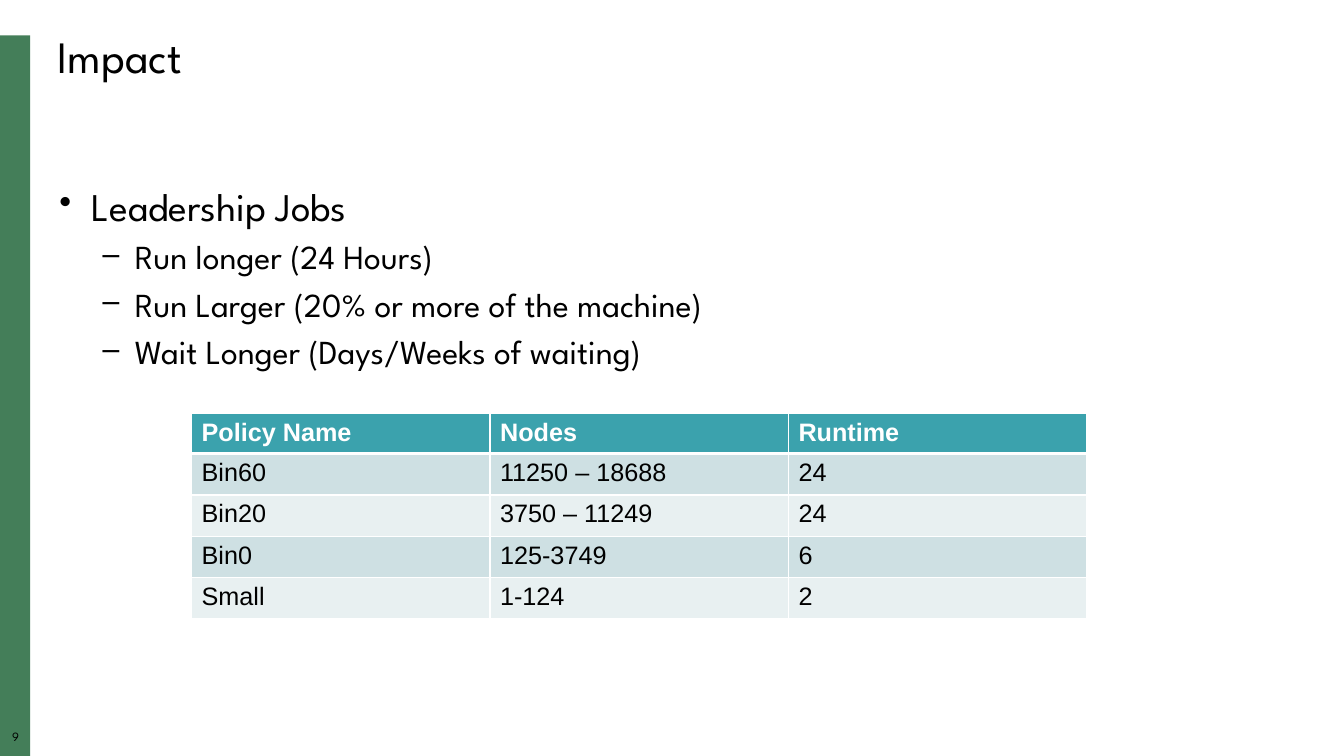
from dataclasses import dataclass

from lxml.etree import SubElement
from pptx import Presentation
from pptx.dml.color import RGBColor as RGB
from pptx.enum.shapes import MSO_SHAPE as SHAPE
from pptx.enum.text import MSO_ANCHOR as ANCHOR, PP_ALIGN as ALIGN
from pptx.oxml.ns import qn
from pptx.util import Inches, Pt

COLORS = {
    "bar": "447E59",
    "text": "000000",
    "white": "FFFFFF",
    "header": "3BA2AD",
    "band_dark": "CEE0E3",
    "band_light": "E8F0F1",
}
HEADING_FONT, TABLE_FONT = "League Spartan", "Arial"


@dataclass
class Line:
    text: str
    size: int
    level: int = 0
    bullet: str = ""
    indent: float = 0
    before: int = 0
    align: ALIGN = ALIGN.LEFT


@dataclass
class TextBlock:
    left: float
    top: float
    width: float
    height: float
    lines: list[Line]
    inset_x: float = 0.1
    inset_y: float = 0.05


TITLE = TextBlock(0.47, 0.3, 12.5, 0.59, [Line("Impact", 32)])
PAGE_NUMBER = TextBlock(0, 7.25, 0.31, 0.17, [Line("9", 9, align=ALIGN.CENTER)], 0, 0)
BODY = TextBlock(0.49, 1.81, 12.5, 4.43, [
    Line("Leadership Jobs", 28, 0, "•", 0.32),
    *(Line(text, 24, 1, "–", 0.75, 8) for text in (
        "Run longer (24 Hours)",
        "Run Larger (20% or more of the machine)",
        "Wait Longer (Days/Weeks of waiting)",
    )),
])

POLICIES = [
    ("Policy Name", "Nodes", "Runtime"),
    ("Bin60", "11250 – 18688", "24"),
    ("Bin20", "3750 – 11249", "24"),
    ("Bin0", "125-3749", "6"),
    ("Small", "1-124", "2"),
]
COL_WIDTH, HEADER_HEIGHT, ROW_HEIGHT = 2.96, 0.38, 0.41


def rgb(name: str) -> RGB:
    return RGB.from_string(COLORS[name])


def add_run(p, text: str, color: str, **formats) -> None:
    r = p.add_run()
    r.text = text
    r.font.color.rgb = rgb(color)
    for name, value in formats.items():
        setattr(r.font, name, value)


def add_color(parent, color: str) -> None:
    SubElement(parent, qn("a:srgbClr"), val=COLORS[color])


def set_bullet(p, char: str, indent: float) -> None:
    pPr = p._p.get_or_add_pPr()
    pPr.set("marL", str(Inches(indent)))
    pPr.set("indent", str(Inches(-0.32)))
    add_color(SubElement(pPr, qn("a:buClr")), "text")
    SubElement(pPr, qn("a:buSzPct"), val="90000")
    SubElement(pPr, qn("a:buChar"), char=char)


def add_text(s, block: TextBlock) -> None:
    box = s.shapes.add_textbox(*map(Inches, (block.left, block.top, block.width, block.height)))
    tf = box.text_frame
    frame_formats = {
        "word_wrap": True,
        "vertical_anchor": ANCHOR.TOP,
        "margin_left": Inches(block.inset_x),
        "margin_right": Inches(block.inset_x),
        "margin_top": Inches(block.inset_y),
        "margin_bottom": Inches(block.inset_y),
    }
    for name, value in frame_formats.items():
        setattr(tf, name, value)
    for i, line in enumerate(block.lines):
        p = tf.add_paragraph() if i else tf.paragraphs[0]
        formats = {
            "level": line.level,
            "alignment": line.align,
            "line_spacing": 0.9,
            "space_before": Pt(line.before),
        }
        for name, value in formats.items():
            setattr(p, name, value)
        if line.bullet:
            set_bullet(p, line.bullet, line.indent)
        add_run(p, line.text, "text", name=HEADING_FONT, size=Pt(line.size))


def set_borders(cell, widths: dict[str, int]) -> None:
    tcPr = cell._tc.get_or_add_tcPr()
    for side, width in widths.items():
        ln = SubElement(tcPr, qn(f"a:ln{side}"), w=str(Pt(width)))
        add_color(SubElement(ln, qn("a:solidFill")), "white")


def add_policy_table(s) -> None:
    rows, cols = len(POLICIES), len(POLICIES[0])
    height = HEADER_HEIGHT + ROW_HEIGHT * (rows - 1)
    table = s.shapes.add_table(rows, cols, Inches(1.9), Inches(4.1),
                               Inches(COL_WIDTH * cols), Inches(height)).table
    for column in table.columns:
        column.width = Inches(COL_WIDTH)
    for i, values in enumerate(POLICIES):
        header = i == 0
        table.rows[i].height = Inches(HEADER_HEIGHT if header else ROW_HEIGHT)
        fill = "header" if header else "band_dark" if i % 2 else "band_light"
        for j, value in enumerate(values):
            cell = table.cell(i, j)
            set_borders(cell, {"L": 1, "R": 1, "T": 3 if i == 1 else 1, "B": 3 if header else 1})
            cell.fill.solid()
            cell.fill.fore_color.rgb = rgb(fill)
            add_run(cell.text_frame.paragraphs[0], value, "white" if header else "text",
                    name=TABLE_FONT, size=Pt(18), bold=header)


def main() -> None:
    prs = Presentation()
    prs.slide_width, prs.slide_height = Inches(13.33), Inches(7.5)
    s = prs.slides.add_slide(prs.slide_layouts[6])

    # Side bar
    bar = s.shapes.add_shape(SHAPE.RECTANGLE, 0, Inches(0.35), Inches(0.3), Inches(7.15))
    bar.shadow.inherit = False
    bar.fill.solid()
    bar.fill.fore_color.rgb = rgb("bar")
    bar.line.fill.background()

    # Page number, title and bullets
    for block in (PAGE_NUMBER, TITLE, BODY):
        add_text(s, block)

    # Queue policies
    add_policy_table(s)

    prs.save("out.pptx")


if __name__ == "__main__":
    main()
